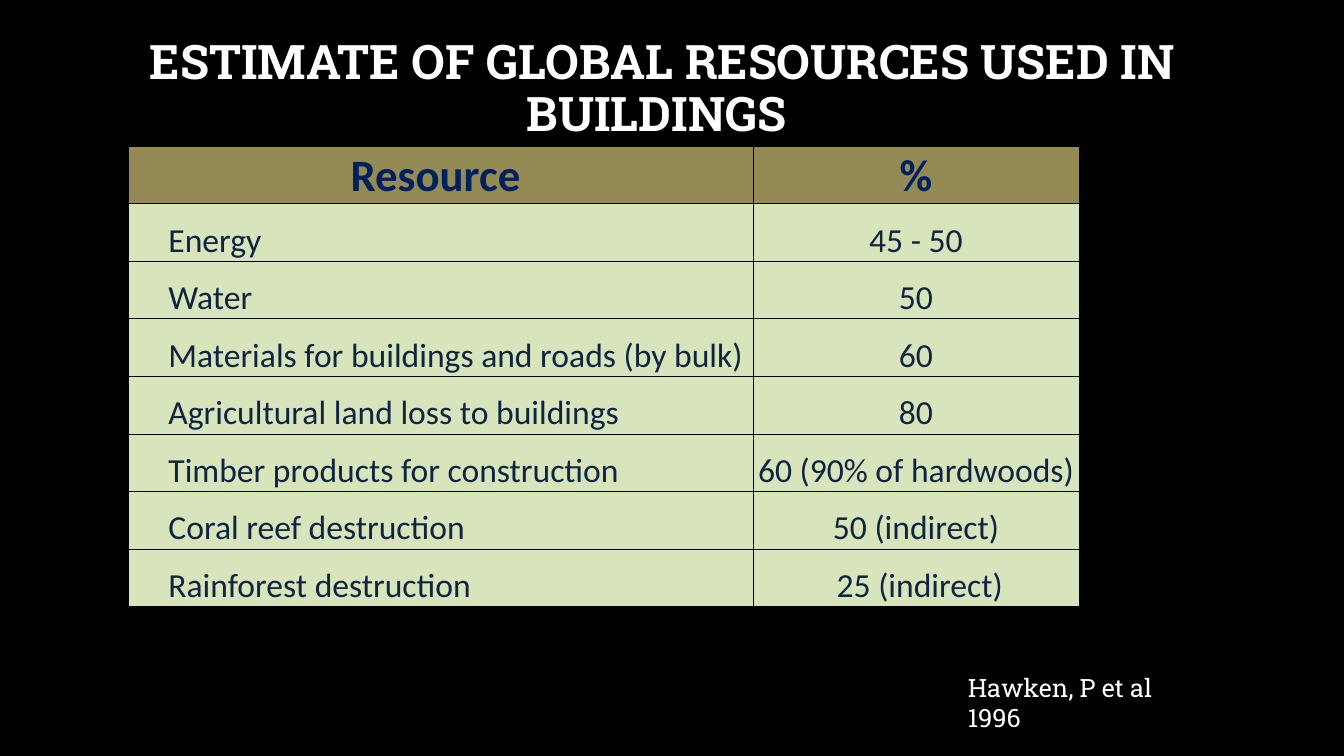
import pptx
import pptx.dml.color
import pptx.enum.text
import pptx.oxml
import pptx.util
from pptx.util import Inches

TITLE = "ESTIMATE OF GLOBAL RESOURCES USED IN BUILDINGS "
HEADER = ("Resource ", "%")
RESOURCES = [
    ("Energy", "45 - 50"),
    ("Water", "50"),
    ("Materials for buildings and roads (by bulk)", "60"),
    ("Agricultural land loss to buildings", "80"),
    ("Timber products for construction", "60 (90% of hardwoods)"),
    ("Coral reef destruction", "50 (indirect)"),
    ("Rainforest destruction", " 25 (indirect)"),
]
SOURCE = "Hawken, P et al 1996"

COLUMN_WIDTHS = (6.2, 3.23)
TABLE_HEIGHT = 4.57
BLACK, WHITE, NAVY, DARK_BLUE = "000000", "FFFFFF", "002060", "0F253F"
OLIVE, PALE_GREEN = "948B54", "D7E4BC"
HEADING_FONT, TABLE_FONT = "Roboto Slab", "Calibri"

ALIGN = pptx.enum.text.PP_ALIGN
ANCHOR = pptx.enum.text.MSO_ANCHOR
AUTO_SIZE = pptx.enum.text.MSO_AUTO_SIZE


def rgb(hex_color):
    return pptx.dml.color.RGBColor.from_string(hex_color)


def write(frame, text, *, font, size, color, bold=False, align=ALIGN.LEFT,
          line_spacing=None, indent=0):
    paragraph = frame.paragraphs[0]
    paragraph.alignment = align
    paragraph.line_spacing = line_spacing
    if indent:
        properties = paragraph._p.get_or_add_pPr()
        properties.set("marL", "0")
        properties.set("indent", str(Inches(indent)))
    run = paragraph.add_run()
    run.text = text
    run.font.name = font
    run.font.size = pptx.util.Pt(size)
    run.font.bold = bold
    run.font.color.rgb = rgb(color)


def format_cell(cell, fill):
    """Set the fill, margins, anchor and thin black borders."""
    cell.margin_left = cell.margin_right = cell.margin_top = Inches(0.01)
    cell.margin_bottom = 0
    cell.vertical_anchor = ANCHOR.BOTTOM
    properties = cell._tc.get_or_add_tcPr()
    for side in ("lnL", "lnR", "lnT", "lnB"):
        properties.append(pptx.oxml.parse_xml(
            f'<a:{side} xmlns:a="http://schemas.openxmlformats.org/drawingml/2006/main"'
            f' w="{pptx.util.Pt(0.5)}"><a:solidFill><a:srgbClr val="{BLACK}"/>'
            f'</a:solidFill></a:{side}>'))
    cell.fill.solid()
    cell.fill.fore_color.rgb = rgb(fill)


def add_title(slide):
    title = slide.shapes.title
    title.left, title.top = Inches(0.91), Inches(0.17)
    title.width, title.height = Inches(11.32), Inches(1.45)
    frame = title.text_frame
    frame.word_wrap = True
    frame.auto_size = AUTO_SIZE.NONE
    frame.vertical_anchor = ANCHOR.MIDDLE
    write(frame, TITLE, font=HEADING_FONT, size=34, color=WHITE, bold=True,
          align=ALIGN.CENTER, line_spacing=0.9)


def add_resource_table(slide):
    rows = [HEADER, *RESOURCES]
    table = slide.shapes.add_table(
        len(rows), len(HEADER), Inches(1.27), Inches(1.45),
        Inches(sum(COLUMN_WIDTHS)), Inches(TABLE_HEIGHT)).table
    table.horz_banding = False
    for column, width in zip(table.columns, COLUMN_WIDTHS):
        column.width = Inches(width)
    for r, row in enumerate(rows):
        is_header = r == 0
        for c, text in enumerate(row):
            cell = table.cell(r, c)
            is_name = c == 0 and not is_header
            format_cell(cell, OLIVE if is_header else PALE_GREEN)
            write(cell.text_frame, text, font=TABLE_FONT,
                  size=32 if is_header else 24,
                  color=NAVY if is_header else DARK_BLUE,
                  bold=is_header,
                  align=ALIGN.LEFT if is_name else ALIGN.CENTER,
                  indent=0.39 if is_name else 0)


def add_source(slide):
    frame = slide.shapes.add_textbox(
        Inches(9.5), Inches(6.62), Inches(2.41), Inches(0.4)).text_frame
    frame.word_wrap = True
    frame.auto_size = AUTO_SIZE.SHAPE_TO_FIT_TEXT
    write(frame, SOURCE, font=HEADING_FONT, size=18, color=WHITE)


def main():
    deck = pptx.Presentation()
    deck.slide_width, deck.slide_height = Inches(13.33), Inches(7.5)
    slide = deck.slides.add_slide(deck.slide_layouts[5])
    slide.background.fill.solid()
    slide.background.fill.fore_color.rgb = rgb(BLACK)
    add_title(slide)
    add_resource_table(slide)
    add_source(slide)
    deck.save("out.pptx")


if __name__ == "__main__":
    main()
